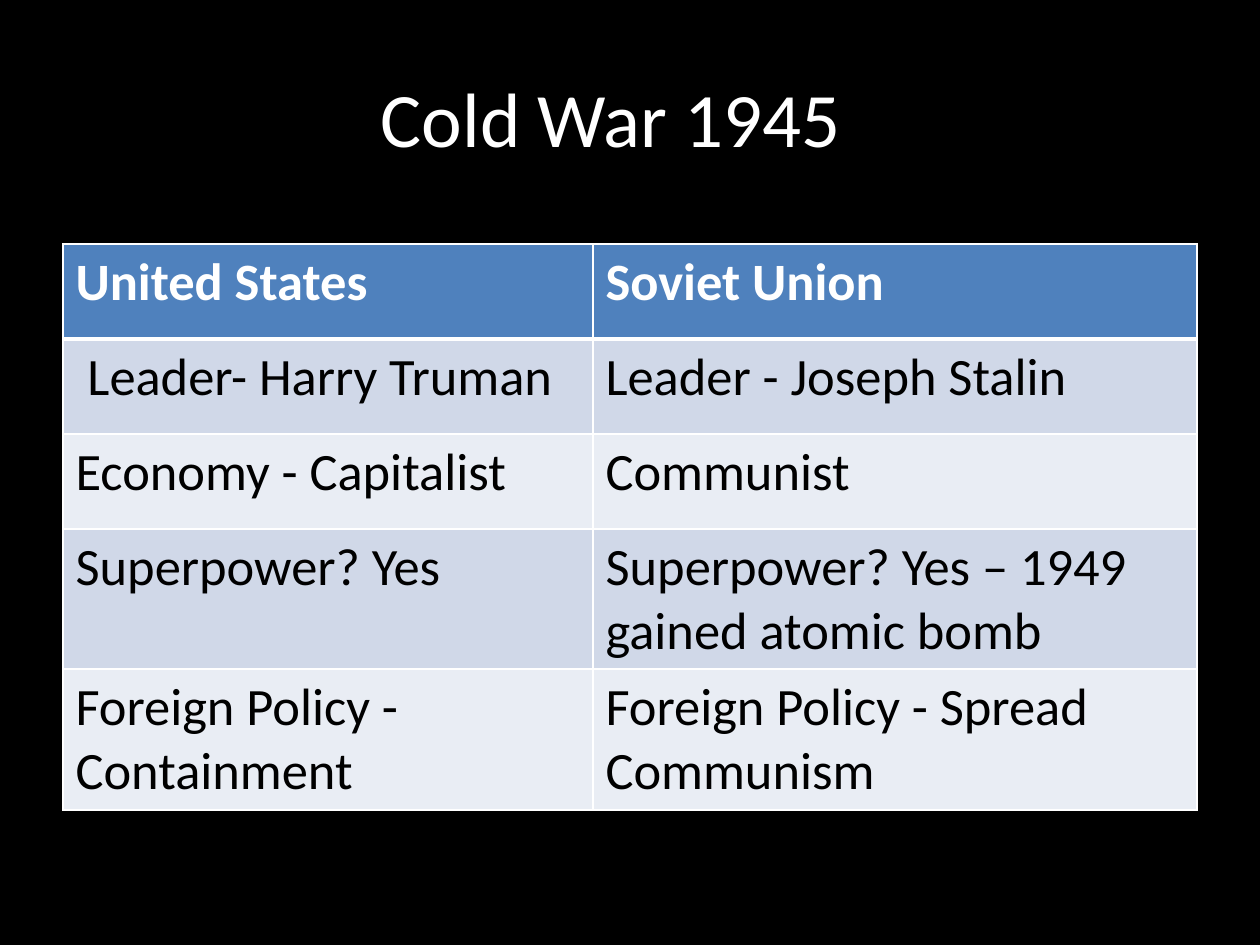
from dataclasses import dataclass

from lxml import etree
from pptx import Presentation
from pptx.dml.color import RGBColor
from pptx.enum.text import MSO_ANCHOR, PP_ALIGN
from pptx.oxml.ns import qn
from pptx.util import Emu, Pt

CENTER = PP_ALIGN.CENTER
MIDDLE = MSO_ANCHOR.MIDDLE
EMU_PER_PX = 914400 / 126
BLANK_LAYOUT = 6


@dataclass(frozen=True)
class Theme:
    font: str = "Calibri"
    background: str = "000000"
    light: str = "FFFFFF"
    dark: str = "000000"
    header: str = "4F81BD"
    bands: tuple[str, str] = ("D0D8E8", "E9EDF4")
    title_size: int = 44
    table_size: int = 30
    border: int = 1
    header_border: int = 3


@dataclass(frozen=True)
class Box:
    left: int
    top: int
    width: int
    height: int


@dataclass(frozen=True)
class ComparisonRow:
    united_states: str
    soviet_union: str
    height: int = 95


THEME = Theme()
TITLE_BOX = Box(63, 38, 1134, 157)
TITLE_RIGHT_INSET = 50
TABLE_BOX = Box(63, 244, 1134, 566)
COLUMN_WIDTHS = (530, 604)
ROWS = (
    ComparisonRow("United States", "Soviet Union"),
    ComparisonRow(" Leader- Harry Truman", "Leader - Joseph Stalin"),
    ComparisonRow("Economy - Capitalist", "Communist"),
    ComparisonRow("Superpower? Yes", "Superpower? Yes – 1949 gained atomic bomb", 140),
    ComparisonRow("Foreign Policy - Containment", "Foreign Policy - Spread Communism", 141),
)


def px(length: int) -> Emu:
    return Emu(round(length * EMU_PER_PX))


def place(box: Box) -> tuple[Emu, Emu, Emu, Emu]:
    return px(box.left), px(box.top), px(box.width), px(box.height)


def style_text(paragraph, size: int, color: str, bold: bool = False) -> None:
    font = paragraph.font
    font.name = THEME.font
    font.size = Pt(size)
    font.bold = bold
    font.color.rgb = RGBColor.from_string(color)


def add_title(slide, text: str) -> None:
    frame = slide.shapes.add_textbox(*place(TITLE_BOX)).text_frame
    frame.word_wrap = True
    frame.vertical_anchor = MIDDLE
    frame.margin_right = px(TITLE_RIGHT_INSET)
    paragraph = frame.paragraphs[0]
    paragraph.text = text
    paragraph.alignment = CENTER
    style_text(paragraph, THEME.title_size, THEME.light)


def set_borders(cell, top: int, bottom: int) -> None:
    properties = cell._tc.get_or_add_tcPr()
    widths = {"lnL": THEME.border, "lnR": THEME.border, "lnT": top, "lnB": bottom}
    for position, (tag, width) in enumerate(widths.items()):
        line = etree.Element(qn(f"a:{tag}"), w=str(Pt(width)))
        fill = etree.SubElement(line, qn("a:solidFill"))
        etree.SubElement(fill, qn("a:srgbClr"), val=THEME.light)
        properties.insert(position, line)


def fill_cell(cell, text: str, row_index: int) -> None:
    is_header = row_index == 0
    cell.text = text
    style_text(
        cell.text_frame.paragraphs[0],
        THEME.table_size,
        THEME.light if is_header else THEME.dark,
        is_header,
    )
    color = THEME.header if is_header else THEME.bands[(row_index - 1) % 2]
    cell.fill.solid()
    cell.fill.fore_color.rgb = RGBColor.from_string(color)
    set_borders(
        cell,
        top=THEME.header_border if row_index == 1 else THEME.border,
        bottom=THEME.header_border if is_header else THEME.border,
    )


def add_comparison_table(slide, rows: tuple[ComparisonRow, ...]) -> None:
    table = slide.shapes.add_table(len(rows), len(COLUMN_WIDTHS), *place(TABLE_BOX)).table
    for column, width in zip(table.columns, COLUMN_WIDTHS):
        column.width = px(width)
    for row_index, row in enumerate(rows):
        table.rows[row_index].height = px(row.height)
        for column_index, text in enumerate((row.united_states, row.soviet_union)):
            fill_cell(table.cell(row_index, column_index), text, row_index)


def main() -> None:
    presentation = Presentation()
    presentation.slide_width = px(1260)
    presentation.slide_height = px(945)
    slide = presentation.slides.add_slide(presentation.slide_layouts[BLANK_LAYOUT])
    background = slide.background.fill
    background.solid()
    background.fore_color.rgb = RGBColor.from_string(THEME.background)
    add_title(slide, "Cold War 1945")
    add_comparison_table(slide, ROWS)
    presentation.save("out.pptx")


if __name__ == "__main__":
    main()
